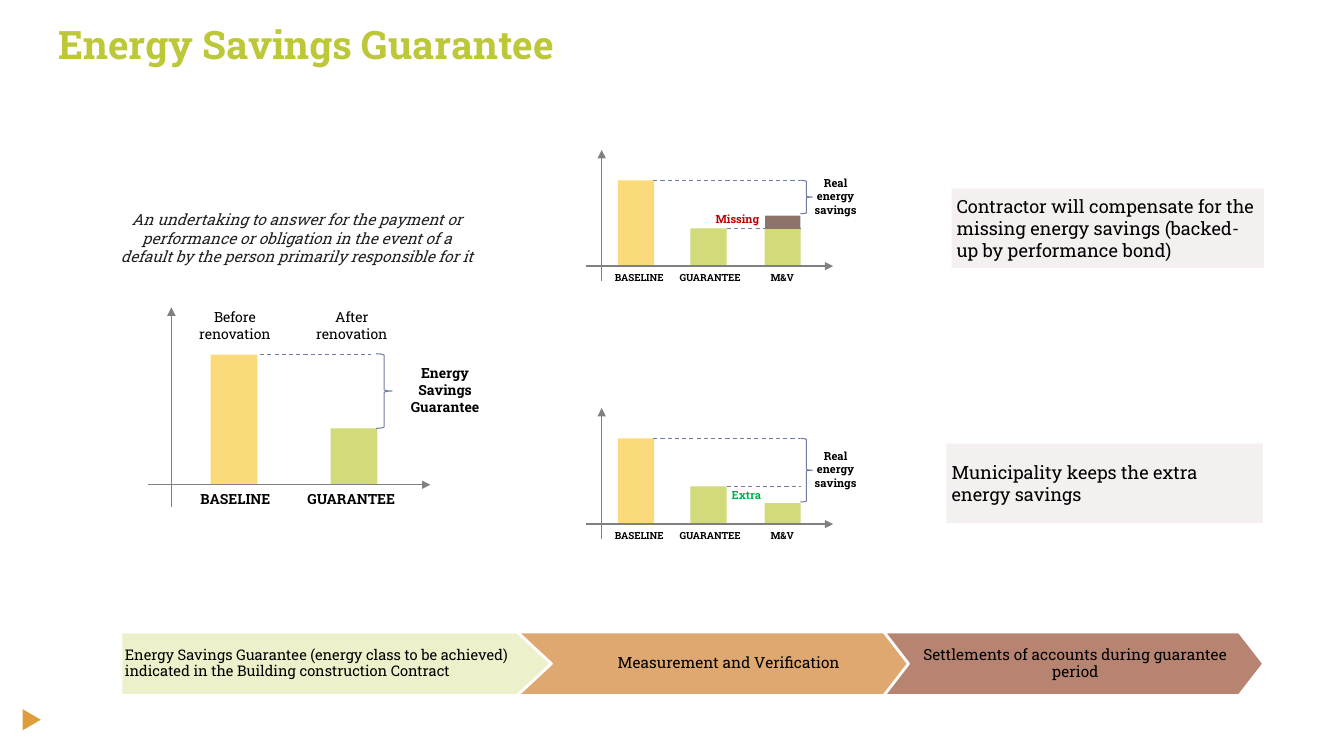
from dataclasses import dataclass

import pptx
import pptx.dml.color
import pptx.enum.dml
import pptx.enum.shapes
import pptx.enum.text
import pptx.oxml.ns
import pptx.util
from lxml import etree

Pt = pptx.util.Pt
Shapes = pptx.enum.shapes.MSO_SHAPE
Align = pptx.enum.text.PP_ALIGN
Anchor = pptx.enum.text.MSO_ANCHOR

COLORS = {
    "black": "000000", "white": "FFFFFF", "title": "BCC838", "quote": "202124",
    "baseline": "FADA7A", "guarantee": "D2DA7A", "missing_bar": "8E736A",
    "axis": "808080", "marker": "727CA3", "missing": "C00000", "extra": "00B050",
    "panel": "E9E3E1", "contract": "EDF0CA", "verification": "DFA870",
    "settlement": "B88472", "triangle": "DE9E3C",
}


@dataclass(frozen=True)
class Box:
    left: float
    top: float
    width: float
    height: float

    def lengths(self) -> tuple:
        return Pt(self.left), Pt(self.top), Pt(self.width), Pt(self.height)


@dataclass(frozen=True)
class Style:
    size: float
    color: str = "black"
    bold: bool = False
    italic: bool = False
    align: Align = Align.CENTER
    line_spacing: float = 1.0


@dataclass(frozen=True)
class Scenario:
    axis_y: float
    measured_height: float
    brace_height: float
    tag: str
    tag_color: str
    tag_box: Box


@dataclass(frozen=True)
class Stage:
    text: str
    color: str
    box: Box
    notch: float
    tip: float
    margins: tuple
    style: Style


@dataclass(frozen=True)
class Outcome:
    text: str
    box: Box


def rgb(name: str) -> pptx.dml.color.RGBColor:
    return pptx.dml.color.RGBColor.from_string(COLORS[name])


def write(shape, lines: list, style: Style) -> None:
    frame = shape.text_frame
    for index, line in enumerate(lines):
        paragraph = frame.add_paragraph() if index else frame.paragraphs[0]
        paragraph.text = line
        paragraph.alignment = style.align
        paragraph.line_spacing = style.line_spacing
        paragraph.font.name = "Roboto Slab"
        paragraph.font.size = Pt(style.size)
        paragraph.font.bold = style.bold
        paragraph.font.italic = style.italic
        paragraph.font.color.rgb = rgb(style.color)


def set_margins(shape, left: float, top: float, right: float, bottom: float) -> None:
    frame = shape.text_frame
    frame.word_wrap = True
    frame.vertical_anchor = Anchor.MIDDLE
    frame.margin_left, frame.margin_top = Pt(left), Pt(top)
    frame.margin_right, frame.margin_bottom = Pt(right), Pt(bottom)


def add_label(slide, box: Box, lines: list, style: Style, wrap: bool = False):
    shape = slide.shapes.add_textbox(*box.lengths())
    shape.text_frame.word_wrap = wrap
    shape.text_frame.auto_size = pptx.enum.text.MSO_AUTO_SIZE.SHAPE_TO_FIT_TEXT
    write(shape, lines, style)
    return shape


def add_filled(slide, box: Box, color: str, kind: Shapes = Shapes.RECTANGLE):
    shape = slide.shapes.add_shape(kind, *box.lengths())
    shape.shadow.inherit = False
    shape.fill.solid()
    shape.fill.fore_color.rgb = rgb(color)
    shape.line.fill.background()
    return shape


def add_brace(slide, box: Box) -> None:
    shape = slide.shapes.add_shape(Shapes.RIGHT_BRACE, *box.lengths())
    shape.shadow.inherit = False
    shape.fill.background()
    shape.line.color.rgb = rgb("marker")
    shape.line.width = Pt(0.75)


def add_line(slide, start: tuple, end: tuple, color: str, width: float):
    line = slide.shapes.add_connector(
        pptx.enum.shapes.MSO_CONNECTOR.STRAIGHT,
        Pt(start[0]), Pt(start[1]), Pt(end[0]), Pt(end[1]))
    line.line.color.rgb = rgb(color)
    line.line.width = Pt(width)
    properties = line.element.spPr
    etree.SubElement(properties, pptx.oxml.ns.qn("a:effectLst"))
    return line


def add_dashes(slide, left: float, right: float, y: float) -> None:
    line = add_line(slide, (left, y), (right, y), "marker", 0.75)
    line.line.dash_style = pptx.enum.dml.MSO_LINE.DASH


def add_axes(slide, x: float, y: float, bottom: float, top: float,
             left: float, right: float) -> None:
    for start, end in (((x, bottom), (x, top)), ((left, y), (right, y))):
        axis = add_line(slide, start, end, "axis", 1)
        outline = axis.element.spPr.find(pptx.oxml.ns.qn("a:ln"))
        etree.SubElement(outline, pptx.oxml.ns.qn("a:tailEnd"), type="triangle")


def add_bar(slide, left: float, width: float, height: float, axis_y: float, color: str) -> None:
    add_filled(slide, Box(left, axis_y - height, width, height), color)


def draw_promise(slide) -> None:
    axis_y = 346.3
    bold = Style(10, bold=True)
    add_bar(slide, 150.5, 33.3, 92.9, axis_y, "baseline")
    add_bar(slide, 236.2, 33.3, 40.3, axis_y, "guarantee")
    add_axes(slide, 122.4, axis_y, 362.2, 219.6, 105.8, 307.4)
    add_label(slide, Box(133.9, 347, 68.4, 19.4), ["BASELINE"], bold)
    add_label(slide, Box(210.2, 347, 81.4, 19.4), ["GUARANTEE"], bold)
    add_brace(slide, Box(268.6, 252.7, 11.5, 53.3))
    add_label(slide, Box(283.7, 257, 68.4, 43.9), ["Energy", "Savings", "Guarantee"], bold)
    add_dashes(slide, 185.8, 265, 253.4)
    for left, moment in ((128.2, "Before"), (211.7, "After")):
        add_label(slide, Box(left, 216.7, 79.2, 31.7), [moment, "renovation"], Style(10), True)


def draw_scenario(slide, scenario: Scenario) -> None:
    axis_y = scenario.axis_y
    baseline_top, guarantee_top = axis_y - 61.2, axis_y - 26.9
    for left, height, color in ((546.2, scenario.measured_height, "guarantee"),
                                (493.2, 26.9, "guarantee"), (441.4, 61.2, "baseline")):
        add_bar(slide, left, 25.8, height, axis_y, color)
    add_axes(slide, 429.8, axis_y, axis_y + 10.6, axis_y - 83, 418.3, 595.1)
    for left, width, name in ((430.6, 51.8, "BASELINE"), (476.6, 61.2, "GUARANTEE"),
                              (542.9, 31.7, "M&V")):
        add_label(slide, Box(left, axis_y + 0.3, width, 15.8), [name], Style(7, bold=True))
    add_brace(slide, Box(571.7, baseline_top, 8.6, scenario.brace_height))
    add_label(slide, Box(574.2, baseline_top + scenario.brace_height / 2 - 18.5, 45.4, 36),
              ["Real", "energy", "savings"], Style(8, bold=True))
    add_dashes(slide, 466.6, 571.7, baseline_top)
    add_dashes(slide, 519.1, 571.9, guarantee_top)
    add_label(slide, scenario.tag_box, [scenario.tag],
              Style(8, scenario.tag_color, bold=True, align=Align.LEFT))


def draw_stage(slide, stage: Stage) -> None:
    box = stage.box
    right, bottom = box.left + box.width, box.top + box.height
    middle = box.top + box.height / 2
    points = [(right - stage.tip, box.top), (right, middle), (right - stage.tip, bottom),
              (box.left, bottom)]
    if stage.notch:
        points.append((box.left + stage.notch, middle))
    builder = slide.shapes.build_freeform(Pt(box.left), Pt(box.top))
    builder.add_line_segments([(Pt(x), Pt(y)) for x, y in points], close=True)
    shape = builder.convert_to_shape()
    shape.shadow.inherit = False
    shape.fill.solid()
    shape.fill.fore_color.rgb = rgb(stage.color)
    shape.line.color.rgb = rgb("white")
    shape.line.width = Pt(2)
    set_margins(shape, *stage.margins)
    write(shape, [stage.text], stage.style)


def draw_outcome(slide, outcome: Outcome) -> None:
    shape = add_filled(slide, outcome.box, "panel")
    color = shape.element.spPr.find(".//" + pptx.oxml.ns.qn("a:srgbClr"))
    etree.SubElement(color, pptx.oxml.ns.qn("a:alpha"), val="50000")
    set_margins(shape, 3.6, 3.6, 3.6, 3.6)
    write(shape, [outcome.text], Style(13, align=Align.LEFT))


SCENARIOS = [
    Scenario(190.1, 27.2, 23.8, "Missing", "missing", Box(504, 148.3, 49, 17.3)),
    Scenario(374.4, 15.1, 45.4, "Extra", "extra", Box(515.5, 345.6, 37.4, 17.3)),
]
OUTCOMES = [
    Outcome("Contractor will compensate for the missing energy savings "
            "(backed-up by performance bond)", Box(679.7, 134.6, 223.2, 56.9)),
    Outcome("Municipality keeps the extra energy savings", Box(676.1, 316.8, 226.1, 56.9)),
]
CENTERED = Style(11, line_spacing=0.9)
STAGES = [
    Stage("Energy Savings Guarantee (energy class to be achieved) indicated in the "
          "Building construction Contract", "contract", Box(86.4, 451.4, 313.9, 45.4),
          0, 20.9, (2.9, 0.7, 9.4, 0.7), Style(10.5, align=Align.LEFT, line_spacing=0.9)),
    Stage("Measurement and Verification", "verification", Box(369.4, 451.4, 300.2, 45.4),
          24.5, 24.5, (20.2, 0.7, 18, 0.7), CENTERED),
    Stage("Settlements of accounts during guarantee period", "settlement",
          Box(631.4, 451.4, 271.4, 45.4), 17.6, 17.6, (20.2, 0.7, 18, 0.7), CENTERED),
]


def main() -> None:
    presentation = pptx.Presentation()
    presentation.slide_width, presentation.slide_height = Pt(960), Pt(540)
    slide = presentation.slides.add_slide(presentation.slide_layouts[6])
    triangle = add_filled(slide, Box(15.1, 507.6, 15.1, 13), "triangle", Shapes.ISOSCELES_TRIANGLE)
    triangle.rotation = 90
    draw_promise(slide)
    for stage in STAGES:
        draw_stage(slide, stage)
    for scenario in SCENARIOS:
        draw_scenario(slide, scenario)
    add_filled(slide, Box(546.5, 154.1, 25.2, 9.4), "missing_bar")
    for outcome in OUTCOMES:
        draw_outcome(slide, outcome)
    title = slide.shapes.add_textbox(*Box(34.6, 15.8, 887, 36).lengths())
    title.text_frame.word_wrap = True
    title.text_frame.vertical_anchor = Anchor.BOTTOM
    write(title, ["Energy Savings Guarantee"], Style(28, "title", bold=True, align=Align.LEFT))
    add_label(slide, Box(77, 146.9, 270.7, 47.5),
              ["An undertaking to answer for the payment or performance or obligation in the "
               "event of a default by the person primarily responsible for it"],
              Style(11, "quote", italic=True), True)
    presentation.save("out.pptx")


if __name__ == "__main__":
    main()
